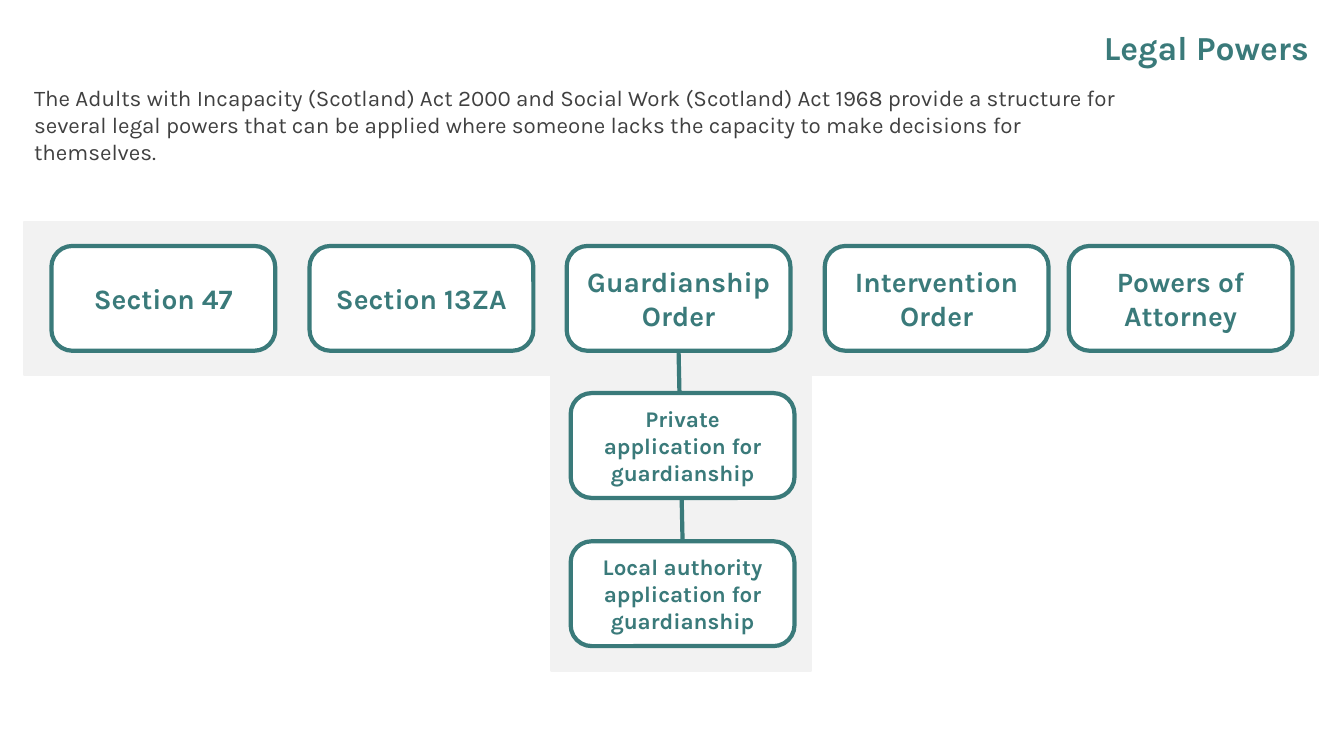
"""Build the Legal Powers slide with its tree of legal orders."""
from dataclasses import dataclass

from lxml.etree import SubElement
from pptx import Presentation
from pptx.dml.color import RGBColor
from pptx.enum.shapes import MSO_CONNECTOR as Connector, MSO_SHAPE as Preset
from pptx.enum.text import MSO_ANCHOR as Anchor, PP_ALIGN as Align
from pptx.oxml.ns import qn
from pptx.shapes.autoshape import Shape
from pptx.slide import Slide
from pptx.text.text import TextFrame
from pptx.util import Inches, Pt

TEAL = RGBColor(0x3A, 0x7A, 0x7A)
GREY = RGBColor(0xF2, 0xF2, 0xF2)
DARK = RGBColor(0x40, 0x40, 0x40)
WHITE = RGBColor(0xFF, 0xFF, 0xFF)

ROW_TOP = 2.44
BRANCH_LEFT = 5.66


@dataclass(frozen=True)
class Area:
    left: float
    top: float
    width: float
    height: float

    def lengths(self) -> list[Inches]:
        return [Inches(n) for n in (self.left, self.top, self.width, self.height)]


@dataclass(frozen=True)
class Power:
    text: str
    left: float
    top: float = ROW_TOP
    size: int = 20


BANDS = [Area(0.24, 2.2, 12.83, 1.52), Area(5.47, 2.33, 2.57, 4.33)]
POWERS = [
    Power("Section 47", 0.51),
    Power("Section 13ZA", 3.07),
    Power("Guardianship Order", 5.62),
    Power("Intervention Order", 8.18),
    Power("Powers of Attorney", 10.6),
    Power("Private application for guardianship", BRANCH_LEFT, 3.9, 16),
    Power("Local authority application for guardianship", BRANCH_LEFT, 5.37, 16),
]
INTRODUCTION = (
    "The Adults with Incapacity (Scotland) Act 2000 and Social Work (Scotland) Act 1968 "
    "provide a structure for several legal powers that can be applied where someone lacks "
    "the capacity to make decisions for themselves."
)


def write(frame: TextFrame, text: str, size: int, color: RGBColor, bold: bool,
          alignment: Align, anchor: Anchor) -> None:
    frame.word_wrap = True
    frame.vertical_anchor = anchor
    paragraph = frame.paragraphs[0]
    paragraph.alignment = alignment
    run = paragraph.add_run()
    run.text = text
    for name, value in {"name": "Karla", "size": Pt(size), "bold": bold}.items():
        setattr(run.font, name, value)
    run.font.color.rgb = color


def add_panel(slide: Slide, preset: Preset, area: Area, fill: RGBColor,
              line: RGBColor, weight: float) -> Shape:
    shape = slide.shapes.add_shape(preset, *area.lengths())
    shape.shadow.inherit = False
    shape.fill.solid()
    shape.fill.fore_color.rgb = fill
    shape.line.color.rgb = line
    shape.line.width = Pt(weight)
    return shape


def add_stem(slide: Slide) -> None:
    ends = [Inches(n) for n in (6.73, 3.47, 6.77, 5.37)]
    stem = slide.shapes.add_connector(Connector.STRAIGHT, *ends)
    stem.line.color.rgb = TEAL
    stem.line.width = Pt(3)
    SubElement(stem.element.spPr, qn("a:effectLst"))


def add_power(slide: Slide, power: Power) -> None:
    area = Area(power.left, power.top, 2.22, 1.04)
    shape = add_panel(slide, Preset.ROUNDED_RECTANGLE, area, WHITE, TEAL, 3)
    shape.adjustments[0] = 0.2
    write(shape.text_frame, power.text, power.size, TEAL, True, Align.CENTER, Anchor.MIDDLE)


def add_text(slide: Slide, area: Area, text: str, size: int, color: RGBColor,
             bold: bool, alignment: Align, anchor: Anchor) -> None:
    box = slide.shapes.add_textbox(*area.lengths())
    write(box.text_frame, text, size, color, bold, alignment, anchor)


def main() -> None:
    presentation = Presentation()
    presentation.slide_width = Inches(13.33)
    presentation.slide_height = Inches(7.5)
    slide = presentation.slides.add_slide(presentation.slide_layouts[6])
    for band in BANDS:
        add_panel(slide, Preset.RECTANGLE, band, GREY, GREY, 1.5)
    add_stem(slide)
    add_text(slide, Area(7.31, 0.22, 5.77, 0.5), "Legal Powers", 24, TEAL, True,
             Align.RIGHT, Anchor.TOP)
    add_text(slide, Area(0.24, 0.88, 10.96, 0.71), INTRODUCTION, 16, DARK, False,
             Align.LEFT, Anchor.MIDDLE)
    for power in POWERS:
        add_power(slide, power)
    presentation.save("out.pptx")


if __name__ == "__main__":
    main()
